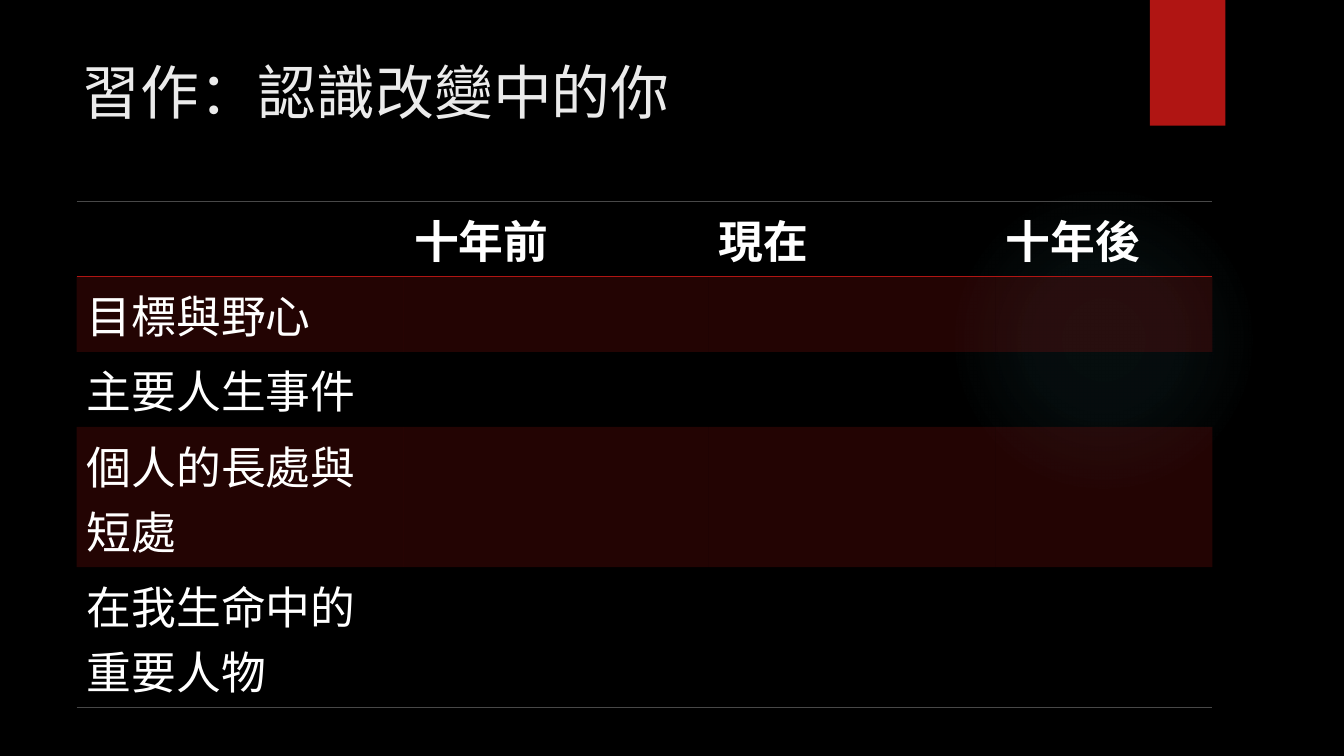
from lxml.etree import SubElement
from pptx import Presentation
from pptx.dml.color import RGBColor
from pptx.enum.shapes import MSO_SHAPE
from pptx.enum.text import MSO_ANCHOR, PP_ALIGN
from pptx.oxml import parse_xml
from pptx.oxml.ns import nsdecls, qn
from pptx.util import Cm, Pt

BLACK = RGBColor(0x00, 0x00, 0x00)
WHITE = RGBColor(0xFF, 0xFF, 0xFF)
TITLE_GREY = RGBColor(0xEB, 0xEB, 0xEB)
RULE_GREY = RGBColor(0x48, 0x48, 0x48)
RED = RGBColor(0xB0, 0x15, 0x13)
TEAL = RGBColor(0x50, 0xB9, 0xC1)

FONT = "TeX Gyre Adventor"
PLAIN_TABLE_STYLE = "{2D5ABB26-0587-4C30-8999-92F81FD0307C}"

ROWS = [
    ["", "十年前", "現在", "十年後"],
    ["目標與野心", "", "", ""],
    ["主要人生事件", "", "", ""],
    ["個人的長處與短處", "", "", ""],
    ["在我生命中的重要人物", "", "", ""],
]
COLUMN_WIDTHS = [8.25, 7.67, 7.24, 5.46]
ROW_HEIGHTS = [1.83, 1.83, 1.83, 3.38, 3.38]


def format_text(text_frame, size, color, bold=False):
    for para in text_frame.paragraphs:
        para.alignment = PP_ALIGN.LEFT
        para.font.size = Pt(size)
        for span in para.runs:
            span.font.name = FONT
            span.font.size = Pt(size)
            span.font.bold = bold
            span.font.color.rgb = color


def add_plain_shape(slide, kind, left, top, width, height):
    shape = slide.shapes.add_shape(kind, Cm(left), Cm(top), Cm(width), Cm(height))
    shape.shadow.inherit = False
    shape.line.fill.background()
    return shape


def add_glow(slide):
    """Add the faint round light that fades to nothing at its edge."""
    glow = add_plain_shape(slide, MSO_SHAPE.OVAL, 23.9, 4.65, 7.82, 7.82)
    stops = "".join(
        f'<a:gs pos="{position * 1000}"><a:srgbClr val="{TEAL}">'
        f'<a:alpha val="{alpha * 1000}"/></a:srgbClr></a:gs>'
        for position, alpha in [(0, 7), (36, 6), (69, 0), (100, 0)]
    )
    gradient = parse_xml(
        f'<a:gradFill {nsdecls("a")} rotWithShape="1"><a:gsLst>{stops}</a:gsLst>'
        '<a:path path="circle"><a:fillToRect l="50000" t="50000" r="50000" b="50000"/>'
        "</a:path></a:gradFill>"
    )
    glow.element.spPr.find(qn("a:prstGeom")).addnext(gradient)


def add_ribbon(slide):
    ribbon = add_plain_shape(slide, MSO_SHAPE.RECTANGLE, 28.98, 0, 1.9, 3.17)
    ribbon.fill.solid()
    ribbon.fill.fore_color.rgb = RED


def set_title(slide, text):
    title = slide.shapes.title
    title.left, title.top, title.width, title.height = Cm(1.8), Cm(1.27), Cm(26.11), Cm(3.89)
    title.text_frame.text = text
    title.text_frame.vertical_anchor = MSO_ANCHOR.TOP
    format_text(title.text_frame, 42, TITLE_GREY)


def add_border(cell, side, color):
    """Draw one cell edge; call before the cell gets its fill."""
    border = SubElement(cell._tc.get_or_add_tcPr(), qn(f"a:{side}"), w=str(Pt(1)))
    fill = SubElement(border, qn("a:solidFill"))
    SubElement(fill, qn("a:srgbClr"), val=str(color))


def fill_cell(cell, banded):
    if not banded:
        cell.fill.background()
        return
    cell.fill.solid()
    cell.fill.fore_color.rgb = RED
    color = cell._tc.tcPr.find(qn("a:solidFill")).find(qn("a:srgbClr"))
    SubElement(color, qn("a:alpha"), val="20000")


def add_life_table(slide):
    frame = slide.shapes.add_table(
        len(ROWS), len(COLUMN_WIDTHS), Cm(1.93), Cm(5.08),
        Cm(sum(COLUMN_WIDTHS)), Cm(sum(ROW_HEIGHTS)),
    )
    table = frame.table
    table._tbl.tblPr.find(qn("a:tableStyleId")).text = PLAIN_TABLE_STYLE
    for column, width in zip(table.columns, COLUMN_WIDTHS):
        column.width = Cm(width)
    for row, height in zip(table.rows, ROW_HEIGHTS):
        row.height = Cm(height)

    last = len(ROWS) - 1
    for row_index, texts in enumerate(ROWS):
        for column_index, text in enumerate(texts):
            cell = table.cell(row_index, column_index)
            cell.text_frame.text = text
            format_text(cell.text_frame, 32, WHITE, bold=row_index == 0)
            if row_index == 0:
                add_border(cell, "lnT", RULE_GREY)
                add_border(cell, "lnB", RED)
            elif row_index == last:
                add_border(cell, "lnB", RULE_GREY)
            fill_cell(cell, banded=row_index % 2 == 1)


def main():
    deck = Presentation()
    deck.slide_width, deck.slide_height = Cm(33.87), Cm(19.05)
    slide = deck.slides.add_slide(deck.slide_layouts[5])
    slide.background.fill.solid()
    slide.background.fill.fore_color.rgb = BLACK
    add_glow(slide)
    add_ribbon(slide)
    set_title(slide, "習作：認識改變中的你")
    add_life_table(slide)
    deck.save("out.pptx")


if __name__ == "__main__":
    main()
